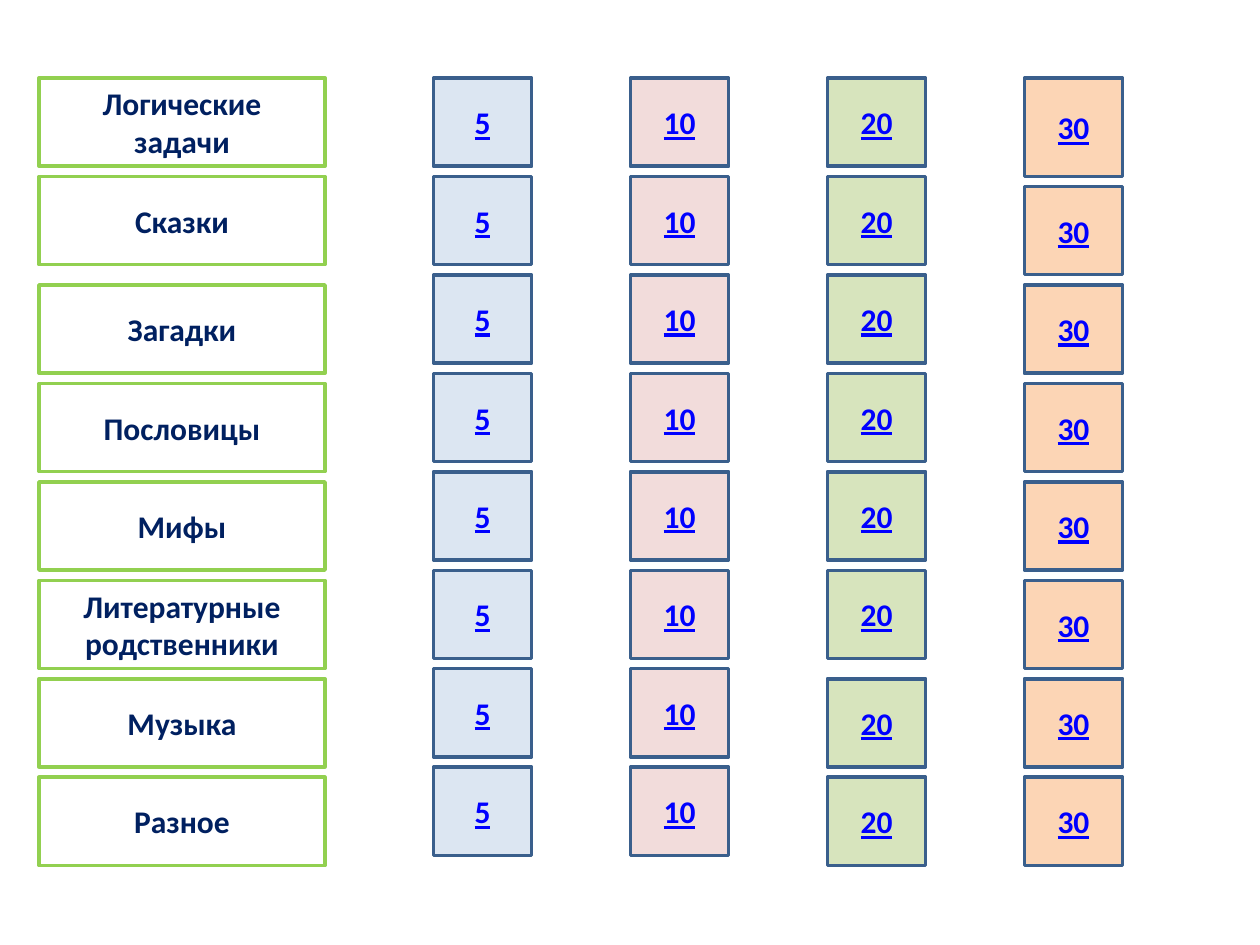
from lxml import etree
from pptx import Presentation
from pptx.dml.color import RGBColor
from pptx.enum import shapes, text
from pptx.oxml.ns import qn
from pptx.util import Inches, Pt

WHITE = RGBColor(0xFF, 0xFF, 0xFF)
GREEN = RGBColor(0x92, 0xD0, 0x50)
NAVY = RGBColor(0x00, 0x20, 0x60)
OUTLINE = RGBColor(0x05, 0x46, 0x97)
STEEL = RGBColor(0x3A, 0x5F, 0x8C)
LINK_BLUE = RGBColor(0x00, 0x00, 0xFF)

TOPICS = ["Логические задачи", "Сказки", "Загадки", "Пословицы",
          "Мифы", "Литературные родственники", "Музыка", "Разное"]
ROWS = len(TOPICS)
CELL_HEIGHT = Inches(0.7)
STEP_DOWN = Inches(0.08)

# points, fill, first row that sits one step lower
SCORES = [
    ("5", RGBColor(0xDC, 0xE6, 0xF2), ROWS),
    ("10", RGBColor(0xF2, 0xDC, 0xDB), ROWS),
    ("20", RGBColor(0xD7, 0xE4, 0xBD), 6),
    ("30", RGBColor(0xFC, 0xD5, 0xB5), 1),
]


def add_cell(slide, box, label, fill, line, color):
    """Add a bordered rectangle and return its text run."""
    sp = slide.shapes.add_shape(shapes.MSO_SHAPE.RECTANGLE, *box)
    sp.shadow.inherit = False
    sp.fill.solid()
    sp.fill.fore_color.rgb = fill
    sp.line.color.rgb = line
    sp.line.width = Pt(2)
    tf = sp.text_frame
    tf.word_wrap = True
    tf.vertical_anchor = text.MSO_ANCHOR.MIDDLE
    p = tf.paragraphs[0]
    p.alignment = text.PP_ALIGN.CENTER
    r = p.add_run()
    r.text = label
    r.font.name = "Calibri"
    r.font.size = Pt(18)
    r.font.bold = True
    r.font.color.rgb = color
    return r


def outline_run(r, color):
    ln = etree.Element(qn("a:ln"), w=str(Pt(1)))
    fill = etree.SubElement(ln, qn("a:solidFill"))
    etree.SubElement(fill, qn("a:srgbClr"), val=str(color))
    r.font._element.insert(0, ln)


def row_top(top, height, row, lowered_from):
    return top + height * row // ROWS + (STEP_DOWN if row >= lowered_from else 0)


def add_topics(slide, left, top, width, height):
    for row, topic in enumerate(TOPICS):
        box = (left, row_top(top, height, row, 2), width, CELL_HEIGHT)
        r = add_cell(slide, box, topic, WHITE, GREEN, NAVY)
        outline_run(r, OUTLINE)


def add_scores(slide, left, top, width, height):
    cell_width = Inches(0.78)
    pitch = (width - cell_width) // (len(SCORES) - 1)
    for col, (points, fill, lowered_from) in enumerate(SCORES):
        for row in range(ROWS):
            # The cell above a lowered one fills the gap in the last column
            tall = row == 0 and lowered_from == 1
            cell_height = CELL_HEIGHT + (STEP_DOWN if tall else 0)
            box = (left + col * pitch, row_top(top, height, row, lowered_from),
                   cell_width, cell_height)
            r = add_cell(slide, box, points, fill, STEEL, LINK_BLUE)
            r.font.underline = True


def main():
    prs = Presentation()
    prs.slide_width, prs.slide_height = Inches(10), Inches(7.5)
    slide = prs.slides.add_slide(prs.slide_layouts[6])
    top, height = Inches(0.62), Inches(6.25)
    add_topics(slide, Inches(0.31), top, Inches(2.27), height)
    add_scores(slide, Inches(3.44), top, Inches(5.47), height)
    prs.save("out.pptx")


if __name__ == "__main__":
    main()
